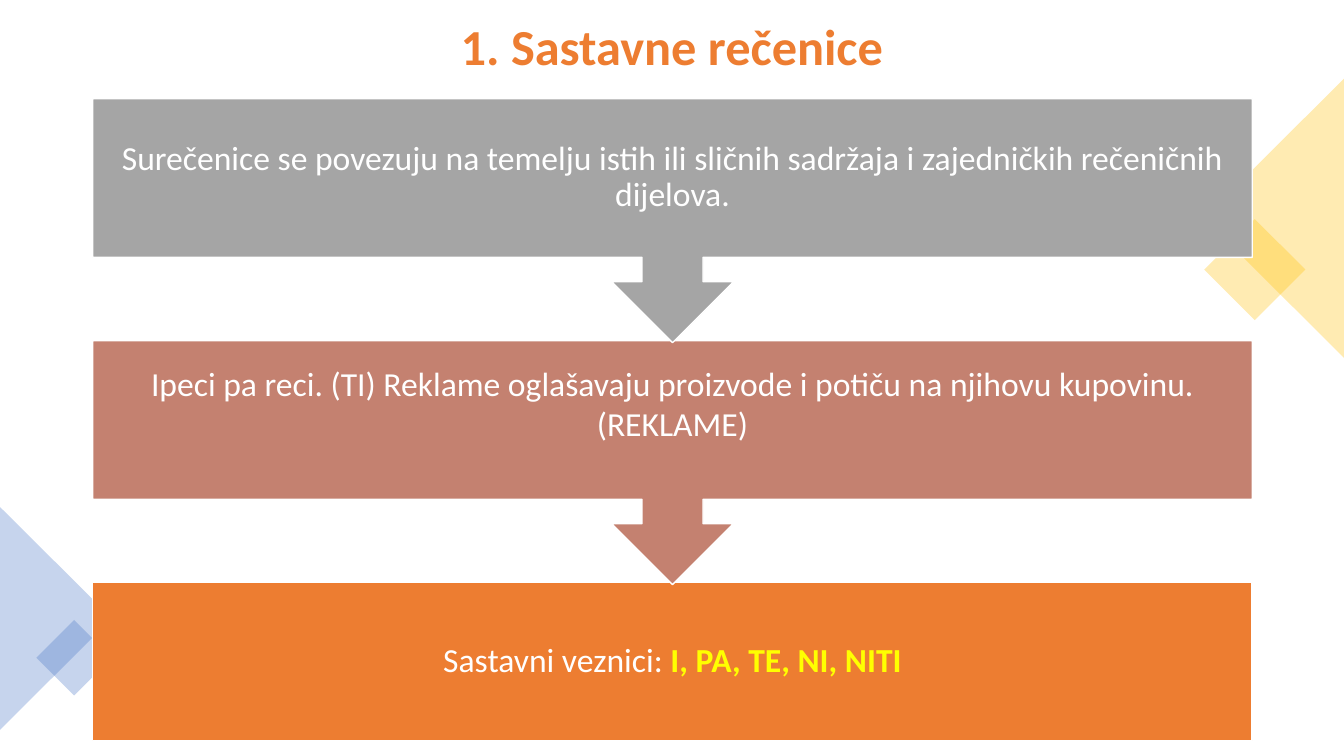
"""Build the slide on copulative sentences: a three-step flow with corner ornaments."""
from dataclasses import dataclass

from lxml.etree import SubElement
from pptx import Presentation
from pptx.dml.color import RGBColor
from pptx.enum.shapes import MSO_SHAPE
from pptx.enum.text import MSO_ANCHOR, PP_ALIGN
from pptx.oxml.ns import qn
from pptx.util import Inches, Pt

ORANGE = RGBColor(0xED, 0x7D, 0x31)
SALMON = RGBColor(0xC4, 0x81, 0x70)
GREY = RGBColor(0xA5, 0xA5, 0xA5)
GOLD = RGBColor(0xFF, 0xC0, 0x00)
BLUE = RGBColor(0x44, 0x72, 0xC4)
WHITE = RGBColor(0xFF, 0xFF, 0xFF)
YELLOW = RGBColor(0xFF, 0xFF, 0x00)

FONT = "Calibri"
STEP_LEFT, STEP_TOP, STEP_WIDTH = 0.92, 0.98, 11.5
STEP_PITCH, CALLOUT_HEIGHT, BODY_HEIGHT = 2.4, 2.42, 1.57
INSET = 0.19


@dataclass
class Span:
    text: str
    color: RGBColor = WHITE
    bold: bool = False
    size: int = 24


@dataclass
class Step:
    fill: RGBColor
    spans: list[Span]
    line_spacing: float = 0.9
    bottom_inset: float = INSET


@dataclass
class Ornament:
    kind: MSO_SHAPE
    left: float
    top: float
    width: float
    height: float
    rotation: int
    color: RGBColor


ORNAMENTS = [
    Ornament(MSO_SHAPE.RECTANGLE, 12.09, 2.32, 0.71, 0.71, 45, GOLD),
    Ornament(MSO_SHAPE.ISOSCELES_TRIANGLE, 11.25, 1.47, 2.77, 1.39, 270, GOLD),
    Ornament(MSO_SHAPE.ISOSCELES_TRIANGLE, -0.55, 5.58, 2.21, 1.11, 90, BLUE),
    Ornament(MSO_SHAPE.RECTANGLE, 0.47, 6.26, 0.53, 0.53, 45, BLUE),
]

STEPS = [
    Step(GREY, [Span("Surečenice se povezuju na temelju istih ili sličnih sadržaja "
                     "i zajedničkih rečeničnih dijelova.")]),
    Step(SALMON, [Span("Ipeci pa reci. (TI) Reklame oglašavaju proizvode i potiču "
                       "na njihovu kupovinu. (REKLAME)")], 1.0, 0.52),
    Step(ORANGE, [Span("Sastavni veznici: "),
                  Span("I, PA, TE, NI, NITI", YELLOW, True)]),
]


def write_text(frame, spans: list[Span], line_spacing: float = 0.9) -> None:
    """Fill a frame with one centred paragraph."""
    frame.word_wrap = True
    frame.vertical_anchor = MSO_ANCHOR.MIDDLE
    para = frame.paragraphs[0]
    para.alignment = PP_ALIGN.CENTER
    para.line_spacing = line_spacing
    for span in spans:
        run = para.add_run()
        run.text = span.text
        run.font.name = FONT
        run.font.size = Pt(span.size)
        run.font.bold = span.bold
        run.font.color.rgb = span.color


def add_title(page) -> None:
    """Place and format the title."""
    title = page.shapes.title
    title.left, title.top = Inches(0.7), Inches(0.04)
    title.width, title.height = Inches(11.93), Inches(0.9)
    write_text(title.text_frame, [Span("1. Sastavne rečenice", ORANGE, True, 36)])


def add_ornament(page, ornament: Ornament) -> None:
    """Draw one translucent corner ornament."""
    shape = page.shapes.add_shape(
        ornament.kind, Inches(ornament.left), Inches(ornament.top),
        Inches(ornament.width), Inches(ornament.height))
    shape.rotation = ornament.rotation
    shape.shadow.inherit = False
    shape.line.fill.background()
    shape.fill.solid()
    shape.fill.fore_color.rgb = ornament.color
    color = shape.fill._xPr.find(qn("a:solidFill"))[0]
    SubElement(color, qn("a:alpha"), val="30000")


def add_step(page, step: Step, top: float, is_last: bool) -> None:
    """Draw one step of the flow and its text."""
    kind = MSO_SHAPE.RECTANGLE if is_last else MSO_SHAPE.UP_ARROW_CALLOUT
    height = BODY_HEIGHT if is_last else CALLOUT_HEIGHT
    left, width = Inches(STEP_LEFT), Inches(STEP_WIDTH)
    shape = page.shapes.add_shape(kind, left, Inches(top), width, Inches(height))
    shape.rotation = 0 if is_last else 180
    shape.shadow.inherit = False
    shape.fill.solid()
    shape.fill.fore_color.rgb = step.fill
    shape.line.color.rgb = WHITE
    shape.line.width = Pt(1)

    box = page.shapes.add_textbox(left, Inches(top), width, Inches(BODY_HEIGHT))
    frame = box.text_frame
    frame.margin_left = frame.margin_right = frame.margin_top = Inches(INSET)
    frame.margin_bottom = Inches(step.bottom_inset)
    write_text(frame, step.spans, step.line_spacing)


def main() -> None:
    """Build and save the deck."""
    deck = Presentation()
    deck.slide_width, deck.slide_height = Inches(13.33), Inches(7.5)
    page = deck.slides.add_slide(deck.slide_layouts[5])
    add_title(page)
    for ornament in ORNAMENTS:
        add_ornament(page, ornament)
    last = len(STEPS) - 1
    for index, step in reversed(list(enumerate(STEPS))):
        add_step(page, step, STEP_TOP + index * STEP_PITCH, index == last)
    deck.save("out.pptx")


if __name__ == "__main__":
    main()
